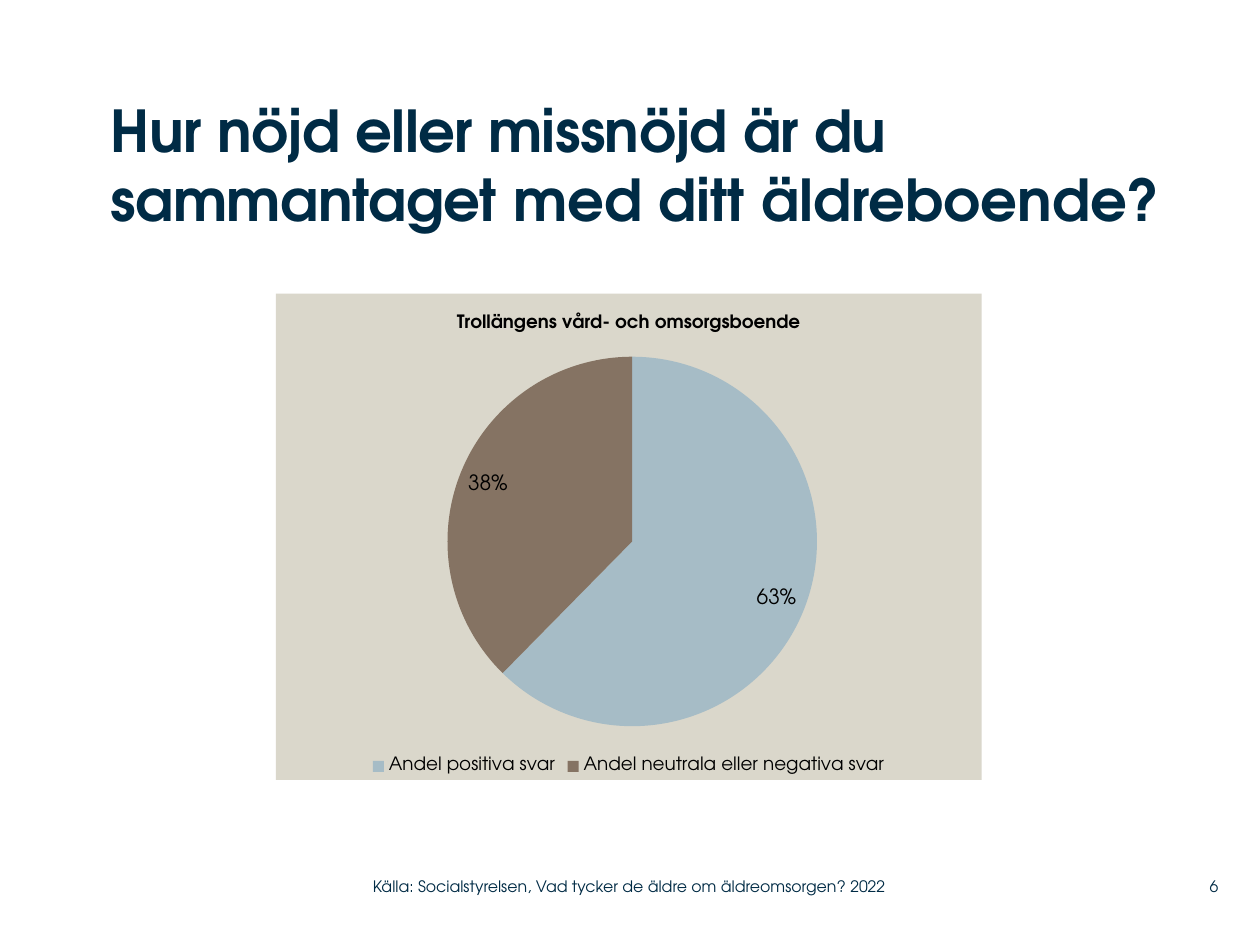
from lxml import etree
from pptx import Presentation
from pptx.chart.data import CategoryChartData
from pptx.dml.color import RGBColor
from pptx.enum.chart import XL_CHART_TYPE, XL_LABEL_POSITION, XL_LEGEND_POSITION
from pptx.enum.text import MSO_ANCHOR, PP_ALIGN
from pptx.oxml import parse_xml
from pptx.oxml.ns import nsdecls
from pptx.util import Inches, Pt

PIE = XL_CHART_TYPE.PIE
INSIDE_END = XL_LABEL_POSITION.INSIDE_END
BOTTOM = XL_LEGEND_POSITION.BOTTOM
TOP, MIDDLE = MSO_ANCHOR.TOP, MSO_ANCHOR.MIDDLE
LEFT, RIGHT = PP_ALIGN.LEFT, PP_ALIGN.RIGHT


def rgb(value):
    return RGBColor.from_string(value)


class SlideBuilder:
    typeface = "TeX Gyre Adventor"
    navy = "002B45"
    black = "000000"
    panel = "DAD7CB"

    def __init__(self, slide):
        self.slide = slide

    def style(self, font, size, color, bold=False):
        font.name = self.typeface
        font.size = Pt(size)
        font.bold = bold
        font.color.rgb = rgb(color)

    def text(self, runs, box, size, bold=False, anchor=MIDDLE, align=LEFT):
        """Add one paragraph from (wording, letter spacing in points) pairs."""
        frame = self.slide.shapes.add_textbox(*map(Inches, box)).text_frame
        frame.word_wrap = True
        frame.vertical_anchor = anchor
        frame.margin_left = frame.margin_right = 0
        frame.margin_top = frame.margin_bottom = 0
        paragraph = frame.paragraphs[0]
        paragraph.alignment = align
        self.style(paragraph.font, size, self.navy, bold)
        for wording, spacing in runs:
            run = paragraph.add_run()
            run.text = wording
            if spacing:
                run.font._element.set("spc", str(round(spacing * 100)))

    def pie(self, title, shares, box, plot):
        """Add a pie from {category: (percent, colour)}; plot is in chart fractions."""
        data = CategoryChartData(number_format='0"%"')
        data.categories = list(shares)
        data.add_series(title, [percent for percent, _ in shares.values()])
        chart = self.slide.shapes.add_chart(PIE, *map(Inches, box), data).chart
        self.style(chart.font, 18, self.black)

        chart.has_title = True
        heading = chart.chart_title.text_frame
        heading.text = title
        self.style(heading.paragraphs[0].font, 10.5, self.black, bold=True)

        chart.has_legend = True
        chart.legend.position = BOTTOM
        chart.legend.include_in_layout = False
        self.style(chart.legend.font, 10.5, self.black)

        pie_plot = chart.plots[0]
        pie_plot.vary_by_categories = True
        for index, (_, color) in enumerate(shares.values()):
            fill = pie_plot.series[0].points[index].format.fill
            fill.solid()
            fill.fore_color.rgb = rgb(color)
        pie_plot.has_data_labels = True
        labels = pie_plot.data_labels
        labels.show_value = True
        labels.show_percentage = False
        labels.number_format = '0"%"'
        labels.number_format_is_linked = False
        labels.position = INSIDE_END
        self.style(labels.font, 12, self.black)

        self.place_plot(chart, plot)
        self.fill_chart(chart)

    def place_plot(self, chart, plot):
        plot_area = chart._chartSpace.chart.plotArea
        for old in plot_area.findall("{*}layout"):
            plot_area.remove(old)
        layout = parse_xml(f"<c:layout {nsdecls('c')}><c:manualLayout/></c:layout>")
        settings = [("layoutTarget", "inner"), ("xMode", "edge"), ("yMode", "edge")]
        settings += zip("xywh", plot)
        namespace = etree.QName(layout).namespace
        for tag, value in settings:
            etree.SubElement(layout[0], f"{{{namespace}}}{tag}", val=str(value))
        plot_area.insert(0, layout)

    def fill_chart(self, chart):
        background = parse_xml(
            f"<c:spPr {nsdecls('c', 'a')}><a:solidFill>"
            f'<a:srgbClr val="{self.panel}"/></a:solidFill>'
            "<a:ln><a:noFill/></a:ln></c:spPr>"
        )
        chart._chartSpace.chart.addnext(background)


def main():
    deck = Presentation()
    deck.slide_width, deck.slide_height = Inches(10), Inches(7.5)
    builder = SlideBuilder(deck.slides.add_slide(deck.slide_layouts[6]))

    question = [
        ("Hur nöjd eller missnöjd är du sammantaget ", -0.3),
        ("med ditt äldreboende?", 0),
    ]
    builder.text(question, (0.88, 0.75, 8.83, 1.42), 33, bold=True, anchor=TOP)

    source = "Källa: Socialstyrelsen, Vad tycker de äldre om äldreomsorgen? 2022"
    builder.text([(source, 0)], (2.96, 6.89, 4.43, 0.29), 9)

    answers = {
        "Andel positiva svar": (63, "A6BCC6"),
        "Andel neutrala eller negativa svar": (38, "857363"),
    }
    builder.pie("Trollängens vård- och omsorgsboende", answers,
                (2.19, 2.33, 5.6, 3.86), (0.24, 0.13, 0.53, 0.76))

    builder.text([("6", 0)], (9.2, 6.89, 0.47, 0.29), 9, align=RIGHT)
    deck.save("out.pptx")


if __name__ == "__main__":
    main()
